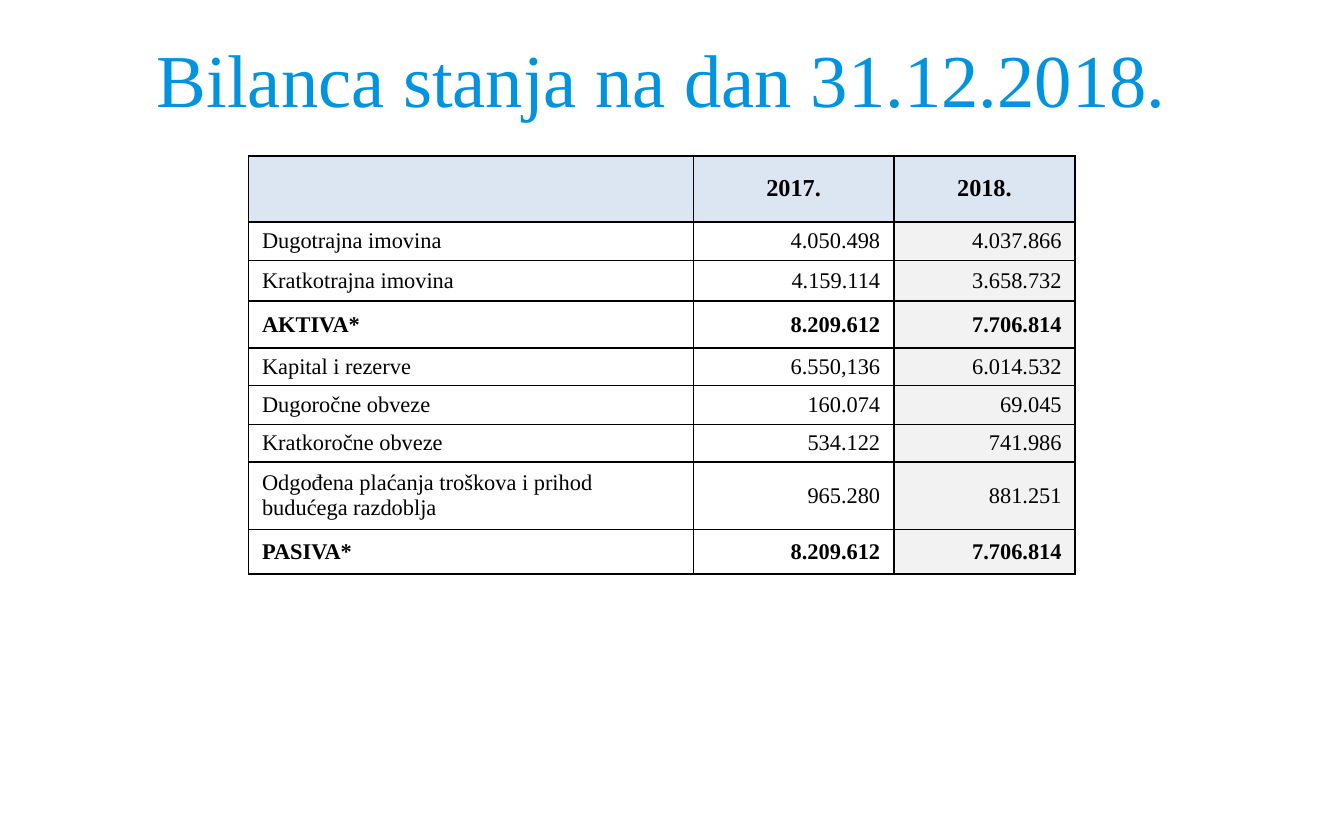
from dataclasses import dataclass

import lxml.etree
import pptx
import pptx.dml.color
import pptx.enum.text
import pptx.oxml.ns
import pptx.slide
import pptx.table
import pptx.util

RGBColor = pptx.dml.color.RGBColor
ALIGN = pptx.enum.text.PP_ALIGN
MIDDLE = pptx.enum.text.MSO_ANCHOR.MIDDLE

PX = 9144  # 100 px to the inch
FONT = "Times New Roman"
TITLE_BLUE = RGBColor(0x00, 0x94, 0xE0)
HEADER_BLUE = RGBColor(0xDC, 0xE6, 0xF2)
LATEST_GREY = RGBColor(0xF2, 0xF2, 0xF2)
BLACK = RGBColor(0x00, 0x00, 0x00)

COLUMN_WIDTHS = (331, 149, 135)


@dataclass(frozen=True)
class BalanceRow:
    label: str
    previous: str
    latest: str
    height: int
    bold: bool = False
    header: bool = False


ROWS = (
    BalanceRow("", "2017.", "2018.", 49, bold=True, header=True),
    BalanceRow("Dugotrajna imovina", "4.050.498", "4.037.866", 29),
    BalanceRow("Kratkotrajna imovina", "4.159.114", "3.658.732", 30),
    BalanceRow("AKTIVA*", "8.209.612", "7.706.814", 35, bold=True),
    BalanceRow("Kapital i rezerve", "6.550,136", "6.014.532", 28),
    BalanceRow("Dugoročne obveze", "160.074", "69.045", 29),
    BalanceRow("Kratkoročne obveze", "534.122", "741.986", 28),
    BalanceRow("Odgođena plaćanja troškova i prihod budućega razdoblja",
               "965.280", "881.251", 50),
    BalanceRow("PASIVA*", "8.209.612", "7.706.814", 33, bold=True),
)


def px(length: int) -> pptx.util.Emu:
    return pptx.util.Emu(length * PX)


def add_borders(cell: pptx.table._Cell) -> None:
    """Outline the cell; must run before its fill is set."""
    properties = cell._tc.get_or_add_tcPr()
    qn = pptx.oxml.ns.qn
    for side in ("a:lnL", "a:lnR", "a:lnT", "a:lnB"):
        line = lxml.etree.SubElement(properties, qn(side), w=str(pptx.util.Pt(1)))
        fill = lxml.etree.SubElement(line, qn("a:solidFill"))
        lxml.etree.SubElement(fill, qn("a:srgbClr"), val=str(BLACK))


def fill_cell(cell: pptx.table._Cell, row: BalanceRow, column: int) -> None:
    add_borders(cell)
    if row.header or column == 2:
        cell.fill.solid()
        cell.fill.fore_color.rgb = HEADER_BLUE if row.header else LATEST_GREY
    else:
        cell.fill.background()
    cell.vertical_anchor = MIDDLE
    cell.margin_left = cell.margin_right = px(10)
    cell.margin_top = cell.margin_bottom = px(4)

    cell.text = (row.label, row.previous, row.latest)[column]
    para = cell.text_frame.paragraphs[0]
    if row.header:
        para.alignment = ALIGN.CENTER
    else:
        para.alignment = ALIGN.RIGHT if column else ALIGN.LEFT
    para.font.name = FONT
    para.font.size = pptx.util.Pt(13 if row.header else 12)
    para.font.bold = row.bold
    para.font.color.rgb = BLACK


def add_title(slide: pptx.slide.Slide, text: str) -> None:
    title = slide.shapes.title
    title.left, title.top, title.width, title.height = map(px, (51, 13, 896, 90))
    title.text_frame.text = text
    title.text_frame.vertical_anchor = MIDDLE
    para = title.text_frame.paragraphs[0]
    para.alignment = ALIGN.CENTER
    para.font.name = FONT
    para.font.size = pptx.util.Pt(40)
    para.font.color.rgb = TITLE_BLUE


def add_balance_table(slide: pptx.slide.Slide) -> None:
    height = sum(row.height for row in ROWS)
    table = slide.shapes.add_table(
        len(ROWS), len(COLUMN_WIDTHS),
        px(185), px(116), px(sum(COLUMN_WIDTHS)), px(height)).table
    table.horz_banding = False
    for column, width in enumerate(COLUMN_WIDTHS):
        table.columns[column].width = px(width)
    for index, row in enumerate(ROWS):
        table.rows[index].height = px(row.height)
        for column in range(len(COLUMN_WIDTHS)):
            fill_cell(table.cell(index, column), row, column)


def main() -> None:
    deck = pptx.Presentation()
    deck.slide_width, deck.slide_height = px(1000), px(625)
    slide = deck.slides.add_slide(deck.slide_layouts[5])
    add_title(slide, "Bilanca stanja na dan 31.12.2018. ")
    add_balance_table(slide)
    deck.save("out.pptx")


if __name__ == "__main__":
    main()
